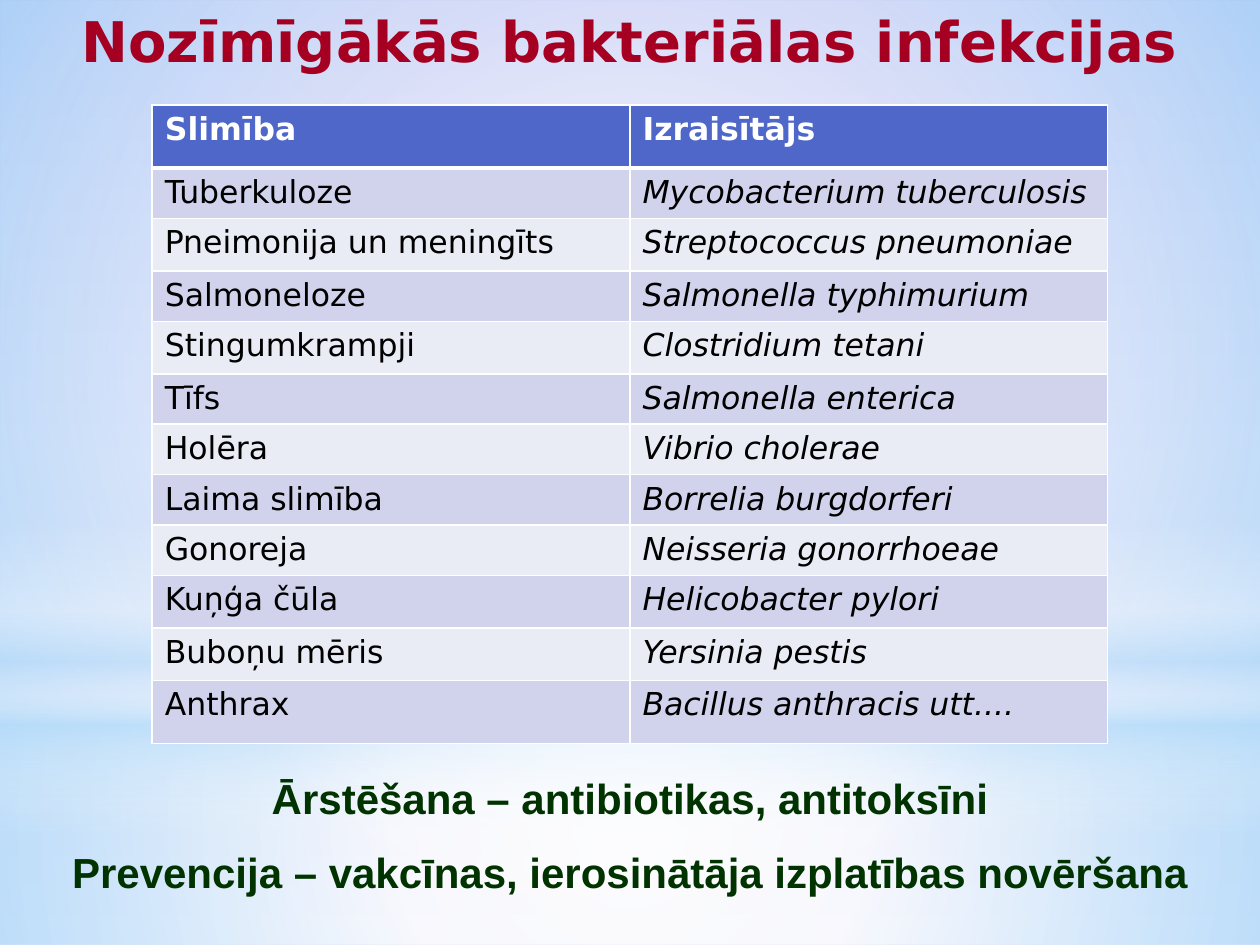
"""Builds a slide on the most important bacterial infections."""
from dataclasses import dataclass

import lxml.etree
import pptx
import pptx.dml.color
import pptx.enum.shapes
import pptx.enum.text
import pptx.oxml
import pptx.oxml.ns
import pptx.util

Pt = pptx.util.Pt
qn = pptx.oxml.ns.qn
SHAPE = pptx.enum.shapes.MSO_SHAPE
ALIGN = pptx.enum.text.PP_ALIGN


@dataclass(frozen=True)
class Theme:
    """Colours, fonts and type sizes of the slide."""
    white: str = "FFFFFF"
    black: str = "000000"
    sky: str = "B4DCFA"
    title: str = "A50021"
    advice: str = "003300"
    header: str = "4E67C8"
    bands: tuple = ("D0D3EB", "E9EBF5")
    backdrop: tuple = ((0, "98A4ED", 100), (50, "C1C7F2", 100), (100, "E1E3F8", 100))
    sans: str = "DejaVu Sans"
    arial: str = "Arial"
    title_size: int = 32
    advice_size: int = 24
    table_size: int = 18


THEME = Theme()

INFECTIONS = [
    ("Slimība", "Izraisītājs", 36),
    ("Tuberkuloze", "Mycobacterium tuberculosis", 28.8),
    ("Pneimonija un meningīts", "Streptococcus pneumoniae", 30),
    ("Salmoneloze", "Salmonella typhimurium", 28.8),
    ("Stingumkrampji", "Clostridium tetani", 30),
    ("Tīfs", "Salmonella enterica", 28.8),
    ("Holēra", "Vibrio cholerae", 28.8),
    ("Laima slimība", "Borrelia burgdorferi", 28.8),
    ("Gonoreja", "Neisseria gonorrhoeae", 28.8),
    ("Kuņģa čūla", "Helicobacter pylori", 30),
    ("Buboņu mēris", "Yersinia pestis", 30),
    ("Anthrax", "Bacillus anthracis utt....", 36),
]

ADVICE = [
    "Ārstēšana – antibiotikas, antitoksīni",
    "Prevencija – vakcīnas, ierosinātāja izplatības novēršana",
]


def rgb(colour):
    """Return the colour object for a hex code."""
    return pptx.dml.color.RGBColor.from_string(colour)


def write_text(frame, lines, *, size, colour, font=THEME.sans, bold=False,
               italic=False, align=ALIGN.LEFT, gap=0):
    """Write unbulleted lines into a text frame in one format."""
    for index, line in enumerate(lines):
        paragraph = frame.add_paragraph() if index else frame.paragraphs[0]
        paragraph.text = line
        paragraph.alignment = align
        paragraph.space_before = Pt(gap if index else 0)
        properties = paragraph._p.get_or_add_pPr()
        properties.set("marL", "0")
        properties.set("indent", "0")
        lxml.etree.SubElement(properties, qn("a:buNone"))
        run_font = paragraph.runs[0].font
        run_font.name, run_font.size = font, Pt(size)
        run_font.bold, run_font.italic = bold, italic
        run_font.color.rgb = rgb(colour)


def fill_gradient(fill, owner, stops, radial=False):
    """Give a fill the (position, colour, opacity) stops, downward or radial."""
    fill.gradient()
    stop_xml = "".join(
        f'<a:gs pos="{position * 1000}"><a:srgbClr val="{colour}">'
        f'<a:alpha val="{opacity * 1000}"/></a:srgbClr></a:gs>'
        for position, colour, opacity in stops)
    direction = ('<a:path path="circle"><a:fillToRect l="50000" t="50000" '
                 'r="50000" b="50000"/></a:path>' if radial
                 else '<a:lin ang="5400000" scaled="0"/>')
    gradient = pptx.oxml.parse_xml(
        f'<a:gradFill {pptx.oxml.ns.nsdecls("a")} rotWithShape="1">'
        f'<a:gsLst>{stop_xml}</a:gsLst>{direction}</a:gradFill>')
    current = owner.find(".//" + qn("a:gradFill"))
    current.getparent().replace(current, gradient)


def add_glow(slide, kind, top, height, stops, radial=True):
    """Add a full-width translucent glow behind the title."""
    glow = slide.shapes.add_shape(kind, 0, Pt(top), Pt(720), Pt(height))
    glow.shadow.inherit = False
    glow.line.fill.background()
    fill_gradient(glow.fill, glow.element, stops, radial)
    slide.shapes.title.element.addprevious(glow.element)


def paint_background(slide):
    """Paint the backdrop and its four layers of light."""
    white, sky = THEME.white, THEME.sky
    fill_gradient(slide.background.fill, slide.element, THEME.backdrop)
    add_glow(slide, SHAPE.RECTANGLE, 402, 138,
             [(0, white, 91), (37, white, 76), (100, sky, 79)])
    add_glow(slide, SHAPE.RECTANGLE, 0, 402,
             [(0, white, 89), (48, white, 62), (100, sky, 79)])
    add_glow(slide, SHAPE.RECTANGLE, 297, 180,
             [(0, white, 0), (29, white, 30), (45, sky, 40),
              (55, white, 26), (65, sky, 60), (100, white, 0)], radial=False)
    add_glow(slide, SHAPE.OVAL, 126, 402, [(0, white, 100), (56, white, 0)])


def fill_placeholder(placeholder, left, top, width, height, lines, **text_format):
    """Move a placeholder and write centred bold lines from its top."""
    placeholder.left, placeholder.top = Pt(left), Pt(top)
    placeholder.width, placeholder.height = Pt(width), Pt(height)
    frame = placeholder.text_frame
    frame.word_wrap = True
    frame.auto_size = pptx.enum.text.MSO_AUTO_SIZE.NONE
    frame.vertical_anchor = pptx.enum.text.MSO_ANCHOR.TOP
    write_text(frame, lines, bold=True, align=ALIGN.CENTER, **text_format)


def set_borders(cell, top, bottom):
    """Draw white cell borders, one point wide at the sides."""
    properties = cell._tc.get_or_add_tcPr()
    widths = {"lnL": 1, "lnR": 1, "lnT": top, "lnB": bottom}
    for index, (side, width) in enumerate(widths.items()):
        properties.insert(index, pptx.oxml.parse_xml(
            f'<a:{side} {pptx.oxml.ns.nsdecls("a")} w="{Pt(width)}"><a:solidFill>'
            f'<a:srgbClr val="{THEME.white}"/></a:solidFill></a:{side}>'))


def add_infection_table(slide):
    """Add the table of diseases and the bacteria that cause them."""
    total_height = sum(height for *_, height in INFECTIONS)
    table = slide.shapes.add_table(len(INFECTIONS), 2, Pt(87), Pt(60),
                                   Pt(546), Pt(total_height)).table
    for row, (disease, agent, height) in enumerate(INFECTIONS):
        table.rows[row].height = Pt(height)
        header = row == 0
        for column, label in enumerate((disease, agent)):
            cell = table.cell(row, column)
            cell.fill.solid()
            cell.fill.fore_color.rgb = rgb(
                THEME.header if header else THEME.bands[(row - 1) % 2])
            set_borders(cell, top=3 if row == 1 else 1, bottom=3 if header else 1)
            write_text(cell.text_frame, [label], size=THEME.table_size,
                       colour=THEME.white if header else THEME.black,
                       bold=header, italic=column == 1 and not header)


def main():
    """Build and save the slide."""
    presentation = pptx.Presentation()
    presentation.slide_width, presentation.slide_height = Pt(720), Pt(540)
    slide = presentation.slides.add_slide(presentation.slide_layouts[1])
    paint_background(slide)
    fill_placeholder(slide.shapes.title, 15, 0, 690, 46,
                     ["Nozīmīgākās bakteriālas infekcijas"],
                     size=THEME.title_size, colour=THEME.title)
    add_infection_table(slide)
    fill_placeholder(slide.placeholders[1], 27, 438, 666, 80, ADVICE,
                     size=THEME.advice_size, colour=THEME.advice,
                     font=THEME.arial, gap=13.5)
    presentation.save("out.pptx")


if __name__ == "__main__":
    main()
